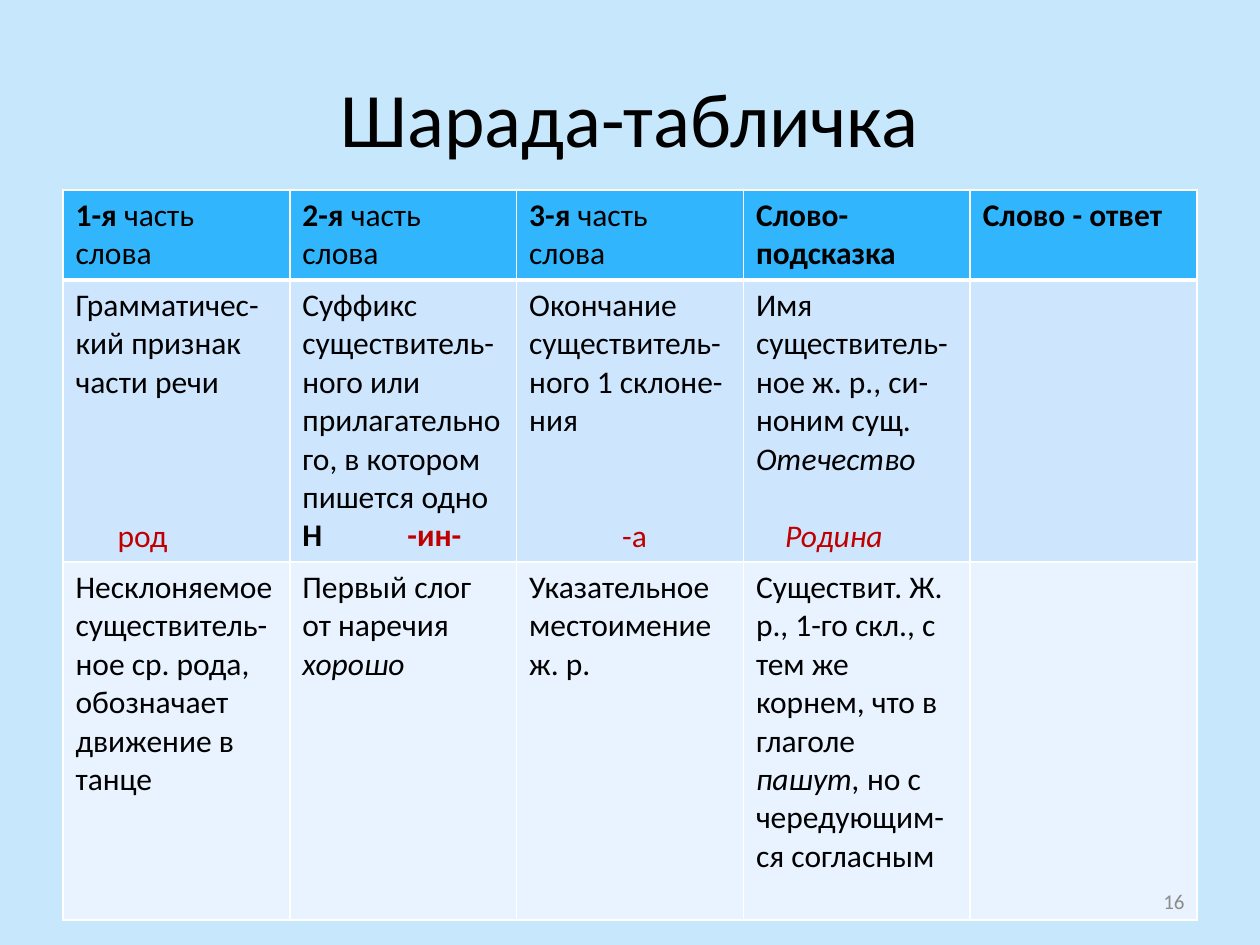
import pptx
import pptx.dml.color
import pptx.enum.text
import pptx.oxml
import pptx.oxml.ns
import pptx.util

FONT = "Calibri"
BLACK, RED, GREY, WHITE = "000000", "C00000", "8C8C8C", "FFFFFF"
SKY = "C6E7FC"
ROW_FILLS = ["31B6FD", "CEE5FE", "E8F3FF"]
ROW_HEIGHTS = [90, 282, 358]
LINE_PT = 22  # height of one 18 pt line

# A run is (text, style): b bold, i italic, r red.
# A paragraph is (runs, lines left free above, indent px, tab px).
HEADER = [
    [([("1-я", "b"), (" часть слова", "")], 0, 0, 0)],
    [([("2-я", "b"), (" часть слова", "")], 0, 0, 0)],
    [([("3-я ", "b"), ("часть слова", "")], 0, 0, 0)],
    [([("Слово-подсказка", "b")], 0, 0, 0)],
    [([("Слово - ответ", "b")], 0, 0, 0)],
]
SOLVED = [
    [([("Грамматичес-кий признак части речи", "")], 0, 0, 0),
     ([("род", "r")], 3, 42, 0)],
    [([("Суффикс существитель-ного или прилагательного, в котором пишется одно ", ""),
       ("Н\t", "b"), ("-ин-", "br")], 0, 0, 105)],
    [([("Окончание существитель-ного 1 склоне-ния", "")], 0, 0, 0),
     ([("-а", "r")], 2, 93, 0)],
    [([("Имя существитель-ное ж. р., си-ноним сущ. ", ""), ("Отечество", "i")], 0, 0, 0),
     ([("Родина", "ir")], 1, 29, 0)],
    [],
]
UNSOLVED = [
    [([("Несклоняемое существитель-", "")], 0, 0, 0),
     ([("ное ср. рода, обозначает движение в танце", "")], 0, 0, 0)],
    [([("Первый слог от наречия ", ""), ("хорошо", "i")], 0, 0, 0)],
    [([("Указательное местоимение ж. р.", "")], 0, 0, 0)],
    [([("Существит. Ж. р., 1-го скл., с тем же корнем, что в глаголе ", ""),
       ("пашут, ", "i"), ("но с чередующим-", "")], 0, 0, 0),
     ([("ся согласным", "")], 0, 0, 0)],
    [],
]


def px(length):
    return pptx.util.Emu(round(length * 914400 / 126))


def rgb(color):
    return pptx.dml.color.RGBColor.from_string(color)


def style_font(font, size, color, bold=False, italic=False):
    font.name, font.size = FONT, pptx.util.Pt(size)
    font.bold, font.italic = bold, italic
    font.color.rgb = rgb(color)


def add_title(slide, box, text):
    title = slide.shapes.title
    title.left, title.top, title.width, title.height = map(px, box)
    frame = title.text_frame
    frame.text = text
    frame.vertical_anchor = pptx.enum.text.MSO_ANCHOR.MIDDLE
    frame.paragraphs[0].alignment = pptx.enum.text.PP_ALIGN.CENTER
    style_font(frame.paragraphs[0].runs[0].font, 44, BLACK)


def set_borders(cell, top, bottom):
    properties = cell._tc.get_or_add_tcPr()
    sides = [("L", 1), ("R", 1), ("T", top), ("B", bottom)]
    for position, (side, points) in enumerate(sides):
        line = pptx.oxml.parse_xml(
            f'<a:ln{side} {pptx.oxml.ns.nsdecls("a")} w="{points * 12700}">'
            f'<a:solidFill><a:srgbClr val="{WHITE}"/></a:solidFill></a:ln{side}>')
        properties.insert(position, line)


def fill_paragraph(paragraph, runs, lines_above, indent, tab):
    if lines_above:
        paragraph.space_before = pptx.util.Pt(lines_above * LINE_PT)
    properties = paragraph._p.get_or_add_pPr()
    if indent:
        properties.set("marL", str(px(indent)))
    if tab:
        properties.append(pptx.oxml.parse_xml(
            f'<a:tabLst {pptx.oxml.ns.nsdecls("a")}>'
            f'<a:tab pos="{px(tab)}" algn="l"/></a:tabLst>'))
    for text, style in runs:
        run = paragraph.add_run()
        run.text = text
        style_font(run.font, 18, RED if "r" in style else BLACK,
                   "b" in style, "i" in style)


def add_charade_table(slide, box, rows):
    table = slide.shapes.add_table(len(rows), len(rows[0]), *map(px, box)).table
    for column in table.columns:
        column.width = px(box[2] / len(rows[0]))
    for r, row in enumerate(rows):
        table.rows[r].height = px(ROW_HEIGHTS[r])
        for c, paragraphs in enumerate(row):
            cell = table.cell(r, c)
            cell.fill.solid()
            cell.fill.fore_color.rgb = rgb(ROW_FILLS[r])
            # The rule under the header is thicker
            set_borders(cell, 3 if r == 1 else 1, 3 if r == 0 else 1)
            frame = cell.text_frame
            for n, parts in enumerate(paragraphs):
                paragraph = frame.add_paragraph() if n else frame.paragraphs[0]
                fill_paragraph(paragraph, *parts)


def add_page_number(slide, box, number):
    frame = slide.shapes.add_textbox(*map(px, box)).text_frame
    frame.word_wrap = True
    frame.text = number
    frame.vertical_anchor = pptx.enum.text.MSO_ANCHOR.MIDDLE
    frame.paragraphs[0].alignment = pptx.enum.text.PP_ALIGN.RIGHT
    style_font(frame.paragraphs[0].runs[0].font, 12, GREY)


def main():
    deck = pptx.Presentation()
    deck.slide_width, deck.slide_height = px(1260), px(945)
    slide = deck.slides.add_slide(deck.slide_layouts[5])
    slide.background.fill.solid()
    slide.background.fill.fore_color.rgb = rgb(SKY)
    add_title(slide, (63, 38, 1134, 158), "Шарада-табличка")
    add_charade_table(slide, (63, 190, 1134, sum(ROW_HEIGHTS)),
                      [HEADER, SOLVED, UNSOLVED])
    add_page_number(slide, (903, 876, 294, 50), "16")
    deck.save("out.pptx")


if __name__ == "__main__":
    main()
